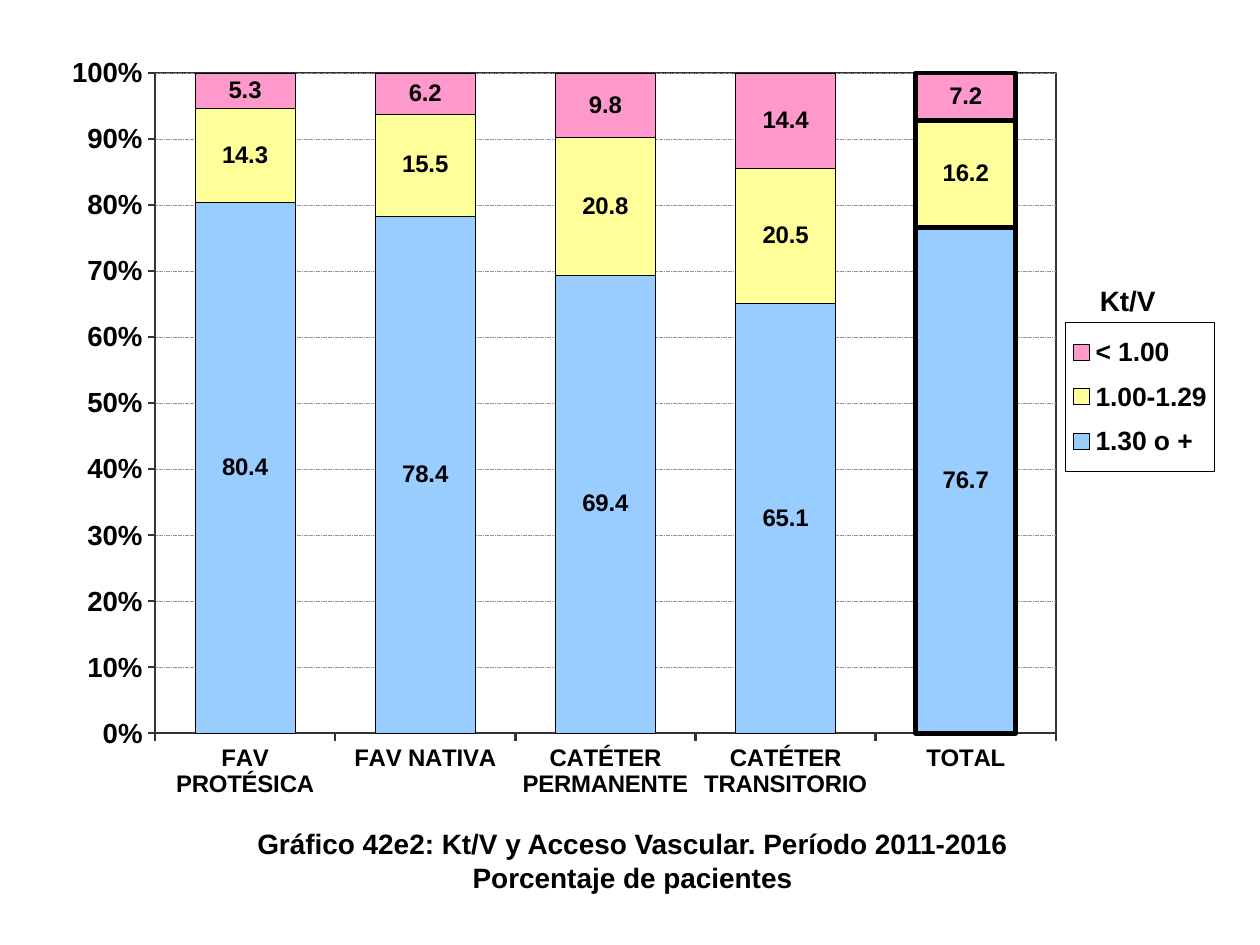
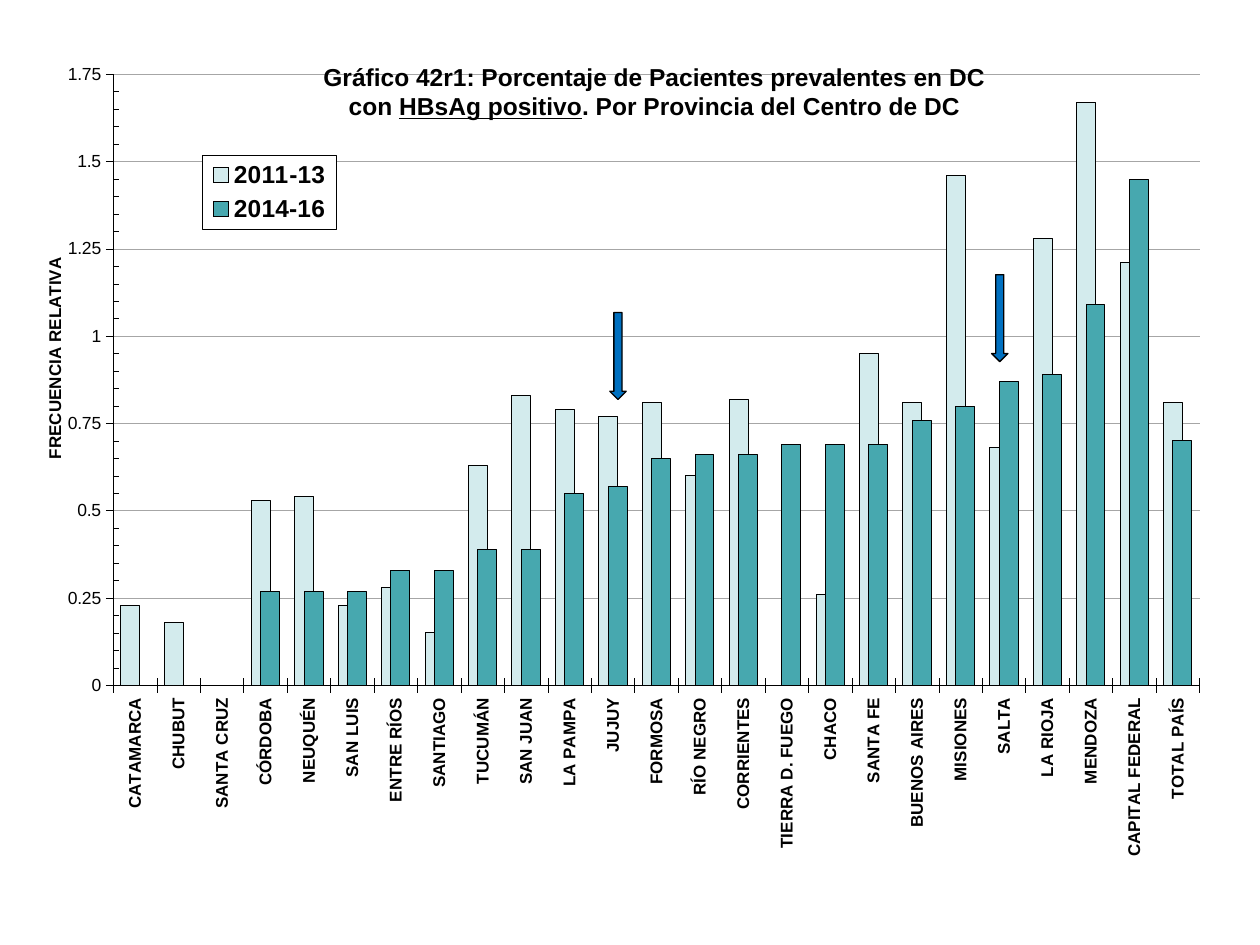
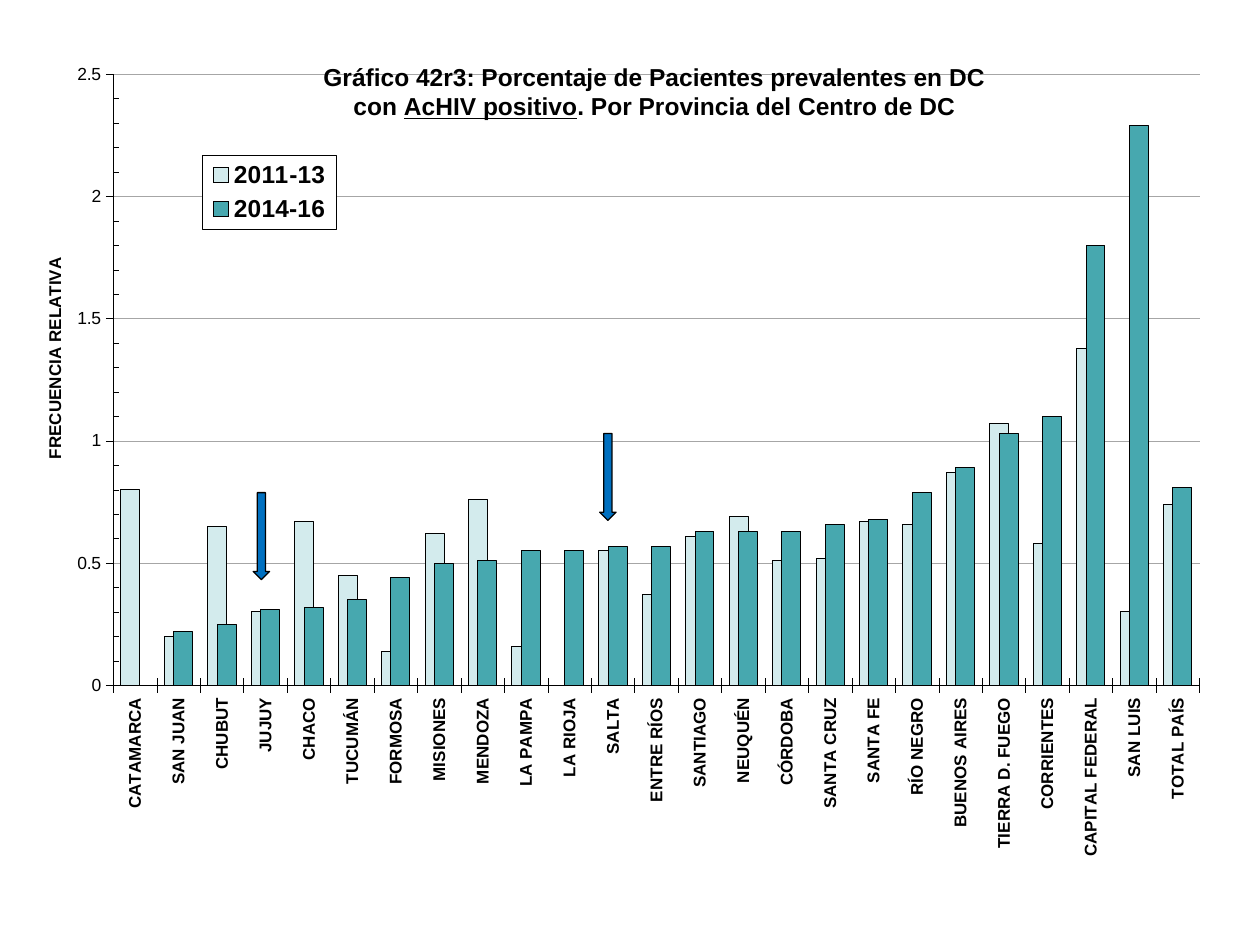
from lxml import etree
from pptx import Presentation
from pptx.chart.data import CategoryChartData
from pptx.dml.color import RGBColor
from pptx.enum.chart import XL_CHART_TYPE, XL_LEGEND_POSITION, XL_TICK_MARK
from pptx.enum.dml import MSO_LINE
from pptx.enum.shapes import MSO_SHAPE
from pptx.enum.text import MSO_ANCHOR, MSO_AUTO_SIZE, PP_ALIGN
from pptx.oxml import parse_xml
from pptx.oxml.ns import nsdecls, qn
from pptx.util import Inches, Pt

FONT = "Arial"
COLORS = {
    "black": "000000", "white": "FFFFFF", "axis": "333333",
    "dash": "969696", "grid": "A6A6A6", "arrow": "0070C0",
    "blue": "99CCFF", "yellow": "FFFF99", "pink": "FF99CC",
    "pale": "D3EBED", "teal": "47A8AF",
}

ACCESS = {
    "title": [["Gráfico 42e2: Kt/V y Acceso Vascular. Período 2011-2016"],
              ["Porcentaje de pacientes"]],
    "cats": ["FAV PROTÉSICA", "FAV NATIVA", "CATÉTER PERMANENTE",
             "CATÉTER TRANSITORIO", "TOTAL"],
    "series": [
        ("1.30 o +", "blue", [80.4, 78.4, 69.4, 65.1, 76.7]),
        ("1.00-1.29", "yellow", [14.3, 15.5, 20.8, 20.5, 16.2]),
        ("< 1.00", "pink", [5.3, 6.2, 9.8, 14.4, 7.2]),
    ],
}

# Each row: province, 2011-13, 2014-16
HBSAG = {
    "title": [["Gráfico 42r1: Porcentaje de Pacientes prevalentes en DC con ",
               "HBsAg positivo", ". Por Provincia del Centro de DC"]],
    "top": 1.75, "step": 0.25,
    "arrows": [(7.87, 2.18), (4.84, 2.48)],
    "rows": [
        ("CATAMARCA", 0.23, 0), ("CHUBUT", 0.18, 0), ("SANTA CRUZ", 0, 0),
        ("CÓRDOBA", 0.53, 0.27), ("NEUQUÉN", 0.54, 0.27),
        ("SAN LUIS", 0.23, 0.27), ("ENTRE RÍOS", 0.28, 0.33),
        ("SANTIAGO", 0.15, 0.33), ("TUCUMÁN", 0.63, 0.39),
        ("SAN JUAN", 0.83, 0.39), ("LA PAMPA", 0.79, 0.55),
        ("JUJUY", 0.77, 0.57), ("FORMOSA", 0.81, 0.65),
        ("RÍO NEGRO", 0.6, 0.66), ("CORRIENTES", 0.82, 0.66),
        ("TIERRA D. FUEGO", 0, 0.69), ("CHACO", 0.26, 0.69),
        ("SANTA FE", 0.95, 0.69), ("BUENOS AIRES", 0.81, 0.76),
        ("MISIONES", 1.46, 0.8), ("SALTA", 0.68, 0.87),
        ("LA RIOJA", 1.28, 0.89), ("MENDOZA", 1.67, 1.09),
        ("CAPITAL FEDERAL", 1.21, 1.45), ("TOTAL PAÍS", 0.81, 0.7),
    ],
}
ACHIV = {
    "title": [["Gráfico 42r3: Porcentaje de Pacientes prevalentes en DC con ",
               "AcHIV positivo", ". Por Provincia del Centro de DC"]],
    "top": 2.5, "step": 0.5,
    "arrows": [(4.76, 3.44), (2.01, 3.91)],
    "rows": [
        ("CATAMARCA", 0.8, 0), ("SAN JUAN", 0.2, 0.22), ("CHUBUT", 0.65, 0.25),
        ("JUJUY", 0.3, 0.31), ("CHACO", 0.67, 0.32), ("TUCUMÁN", 0.45, 0.35),
        ("FORMOSA", 0.14, 0.44), ("MISIONES", 0.62, 0.5),
        ("MENDOZA", 0.76, 0.51), ("LA PAMPA", 0.16, 0.55),
        ("LA RIOJA", 0, 0.55), ("SALTA", 0.55, 0.57),
        ("ENTRE RÍOS", 0.37, 0.57), ("SANTIAGO", 0.61, 0.63),
        ("NEUQUÉN", 0.69, 0.63), ("CÓRDOBA", 0.51, 0.63),
        ("SANTA CRUZ", 0.52, 0.66), ("SANTA FE", 0.67, 0.68),
        ("RÍO NEGRO", 0.66, 0.79), ("BUENOS AIRES", 0.87, 0.89),
        ("TIERRA D. FUEGO", 1.07, 1.03), ("CORRIENTES", 0.58, 1.1),
        ("CAPITAL FEDERAL", 1.38, 1.8), ("SAN LUIS", 0.3, 2.29),
        ("TOTAL PAÍS", 0.74, 0.81),
    ],
}

ACCESS_BOX = (0.18, 0.23, 9.54, 6.95)
PROVINCE_BOX = (0.28, 0.44, 9.37, 6.61)


def rgb(name):
    return RGBColor.from_string(COLORS[name])


def style(font, size, bold=True):
    font.name, font.size, font.bold = FONT, Pt(size), bold
    font.color.rgb = rgb("black")


def stroke(line, color, width, dash=None):
    line.color.rgb = rgb(color)
    line.width = Pt(width)
    if dash:
        line.dash_style = dash


def paint(item, fill, width):
    item.format.fill.solid()
    item.format.fill.fore_color.rgb = rgb(fill)
    stroke(item.format.line, "black", width)


def layout(node, index, box, place, inner=False):
    """Fix a chart part at place, in inches from the chart's corner."""
    old = node.find(qn("c:layout"))
    if old is not None:
        node.remove(old)
    part = etree.Element(qn("c:layout"))
    man = etree.SubElement(part, qn("c:manualLayout"))
    items = [("layoutTarget", "inner")] if inner else []
    items += [("xMode", "edge"), ("yMode", "edge")]
    sizes = box[2:] * 2
    items += [(tag, inch / size) for tag, inch, size in zip("xywh", place, sizes)]
    for tag, val in items:
        etree.SubElement(man, qn("c:" + tag)).set("val", str(val))
    node.insert(index, part)


def frame(fill=None, line=None, width=0.0):
    """Return the shape properties of a chart part."""
    def solid(name):
        if not name:
            return "<a:noFill/>"
        return f'<a:solidFill><a:srgbClr val="{COLORS[name]}"/></a:solidFill>'
    return parse_xml(f'<c:spPr {nsdecls("c", "a")}>{solid(fill)}'
                     f'<a:ln w="{Pt(width)}">{solid(line)}</a:ln></c:spPr>')


def add_chart(slide, kind, box, cats, series, plot_box, key_box, key_size,
              overlap, edge, border=None):
    data = CategoryChartData()
    data.categories = cats
    for name, _, vals in series:
        data.add_series(name, vals)
    chart = slide.shapes.add_chart(kind, *map(Inches, box), data).chart
    chart.has_title = False
    style(chart.font, 11.7, False)
    space = chart.element
    space.find(qn("c:chart")).addnext(frame())
    area = next(space.iter(qn("c:plotArea")))
    layout(area, 0, box, plot_box, inner=True)
    area.append(frame(None, border, 1.37))

    plot = chart.plots[0]
    plot.gap_width, plot.overlap = 80, overlap
    plot.vary_by_categories = False
    for bar, (_, color, _) in zip(plot.series, series):
        paint(bar, color, edge)
        bar.invert_if_negative = False

    chart.has_legend = True
    key = chart.legend
    key.position = XL_LEGEND_POSITION.RIGHT
    key.include_in_layout = False
    style(key.font, key_size)
    layout(key._element, 1, box, key_box)
    key._element.find(qn("c:overlay")).addnext(frame("white", "black", 0.5))
    return chart


def set_axes(chart, top, step, cat_size, val_size, bold, line, grid):
    cat, val = chart.category_axis, chart.value_axis
    style(cat.tick_labels.font, cat_size)
    style(val.tick_labels.font, val_size, bold)
    for axis in (cat, val):
        stroke(axis.format.line, *line)
        axis.major_tick_mark = XL_TICK_MARK.OUTSIDE
        axis.minor_tick_mark = XL_TICK_MARK.NONE
    val.minimum_scale, val.maximum_scale, val.major_unit = 0, top, step
    val.has_major_gridlines = True
    stroke(val.major_gridlines.format.line, *grid)
    return cat, val


def set_title(slide, lines, box, size):
    """Write the title; the second run of a line is underlined."""
    title = slide.shapes.title
    title.left, title.top, title.width, title.height = map(Inches, box)
    text = title.text_frame
    text.word_wrap = True
    text.auto_size = MSO_AUTO_SIZE.SHAPE_TO_FIT_TEXT
    text.vertical_anchor = MSO_ANCHOR.TOP
    for i, runs in enumerate(lines):
        para = text.add_paragraph() if i else text.paragraphs[0]
        para.alignment = PP_ALIGN.CENTER
        for j, words in enumerate(runs):
            run = para.add_run()
            run.text = words
            style(run.font, size)
            run.font.underline = j == 1
    slide.shapes._spTree.append(title._element)


def access_slide(slide, info):
    chart = add_chart(
        slide, XL_CHART_TYPE.COLUMN_STACKED_100, ACCESS_BOX,
        info["cats"], info["series"], (1.05, 0.35, 7.15, 5.24),
        (8.28, 2.33, 1.18, 1.18), 15.1, 100, 0.34, "axis")
    _, val = set_axes(chart, 1, 0.1, 13.7, 15.8, True, ("axis", 1.37),
                      ("dash", 0.34, MSO_LINE.SQUARE_DOT))
    val.tick_labels.number_format = "0%"
    val.tick_labels.number_format_is_linked = False
    plot = chart.plots[0]
    total = len(info["cats"]) - 1
    for bar, (_, color, _) in zip(plot.series, info["series"]):
        paint(bar.points[total], color, 2.75)
        tags = bar.data_labels
        tags.show_value = True
        tags.number_format, tags.number_format_is_linked = "0.0", False
        style(tags.font, 13.7)
    set_title(slide, info["title"], (0.67, 6.51, 8.7, 0.64), 16)
    label = slide.shapes.add_textbox(*map(Inches, (8.63, 2.2, 0.65, 0.37)))
    label.text_frame.text = "Kt/V"
    label.text_frame.word_wrap = False
    style(label.text_frame.paragraphs[0].runs[0].font, 16)


def province_slide(slide, info):
    cats, early, late = zip(*info["rows"])
    series = [("2011-13", "pale", early), ("2014-16", "teal", late)]
    chart = add_chart(
        slide, XL_CHART_TYPE.COLUMN_CLUSTERED, PROVINCE_BOX,
        cats, series, (0.62, 0.15, 8.62, 4.85),
        (1.33, 0.79, 1.06, 0.59), 14, 51, 0.5)
    cat, val = set_axes(chart, info["top"], info["step"], 9.7, 10, False,
                        ("black", 0.25), ("grid", 0.25, MSO_LINE.ROUND_DOT))
    cat.major_tick_mark = XL_TICK_MARK.CROSS
    turn = cat._element.find(qn("c:txPr")).find(qn("a:bodyPr"))
    turn.set("rot", "-5400000")
    turn.set("vert", "horz")
    val.minor_tick_mark = XL_TICK_MARK.INSIDE
    val.minor_unit = info["step"] / 5
    val.tick_labels.number_format = "General"
    val.tick_labels.number_format_is_linked = False
    name = val.axis_title
    name.text_frame.text = "FRECUENCIA RELATIVA "
    style(name.text_frame.paragraphs[0].runs[0].font, 9.7)
    layout(name._element, 1, PROVINCE_BOX, (0.04, 1.54))

    set_title(slide, info["title"], (2.28, 0.44, 5.83, 0.57), 14)
    for left, top in info["arrows"]:
        arrow = slide.shapes.add_shape(
            MSO_SHAPE.DOWN_ARROW, *map(Inches, (left, top, 0.13, 0.69)))
        arrow.shadow.inherit = False
        arrow.fill.solid()
        arrow.fill.fore_color.rgb = rgb("arrow")
        stroke(arrow.line, "black", 0.75)


def main():
    deck = Presentation()
    deck.slide_width, deck.slide_height = Inches(10), Inches(7.5)
    for draw, info in ((access_slide, ACCESS), (province_slide, HBSAG),
                       (province_slide, ACHIV)):
        draw(deck.slides.add_slide(deck.slide_layouts[5]), info)
    deck.save("out.pptx")


if __name__ == "__main__":
    main()
